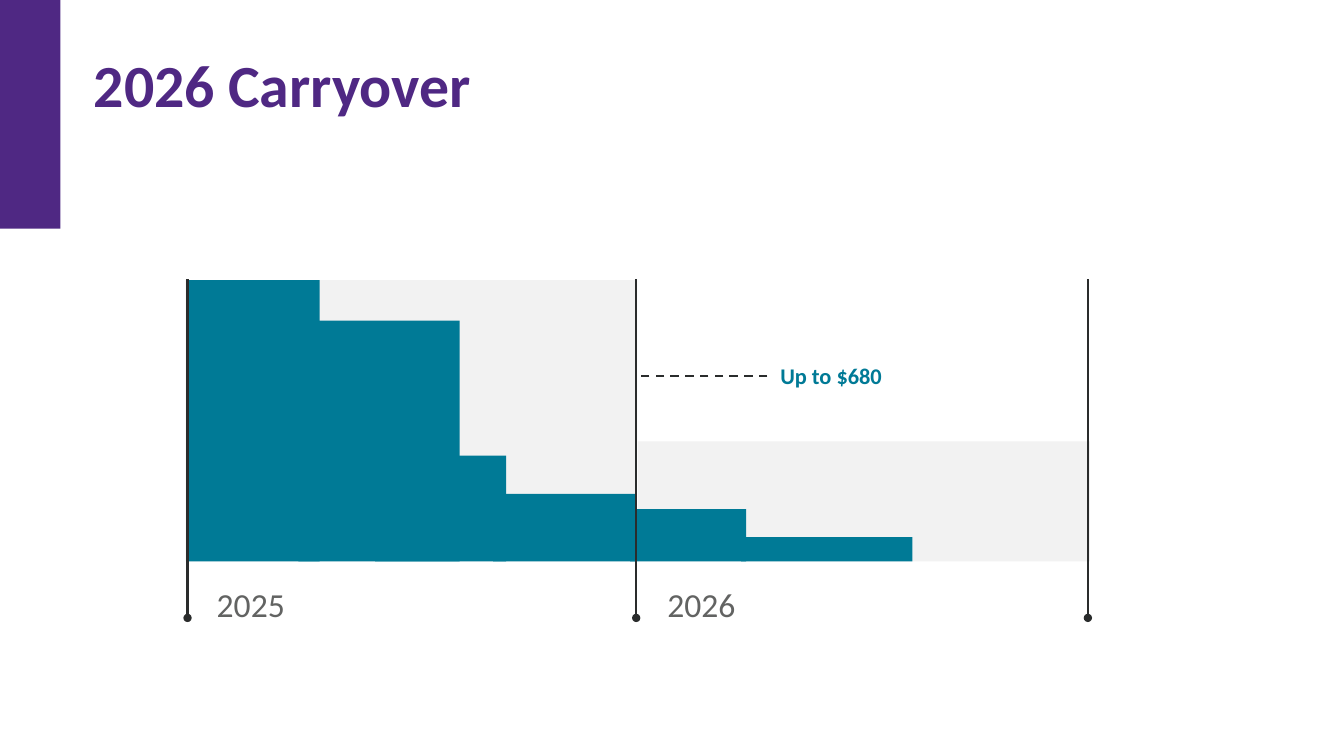
"""Build the 2026 Carryover slide."""
import pptx
import pptx.dml.color
import pptx.enum.dml
import pptx.enum.shapes
import pptx.enum.text
import pptx.oxml
import pptx.oxml.ns
import pptx.util
from pptx.util import Inches

COLORS = {"purple": "4F2883", "teal": "007A96", "panel": "F2F2F2",
          "line": "2A2C2C", "label": "626362"}
BASELINE = 5.57
AXIS_TOP, AXIS_END = 2.77, 6.13
AXES = [1.86, 10.79, 6.31]
PANELS = [(1.84, 4.48, 2.79), (6.33, 4.48, 1.19)]
BALANCES = [(1.87, 1.3, 2.79), (2.96, 1.6, 2.39), (3.72, 1.3, 1.05),
            (4.89, 1.41, 0.67), (6.25, 1.15, 0.52), (7.35, 1.7, 0.24)]
YEARS = [("2025", 2.02, 4.36), ("2026", 6.49, 4)]


class Painter:
    """Holds the style and the current page."""

    font = "Calibri"
    shapes = pptx.enum.shapes.MSO_SHAPE

    def __init__(self, page):
        self.page = page

    def color(self, name):
        return pptx.dml.color.RGBColor.from_string(COLORS[name])

    def fill_text(self, box, text, size, color, bold=False, inset=0.13):
        frame = box.text_frame
        frame.word_wrap = True
        frame.auto_size = pptx.enum.text.MSO_AUTO_SIZE.SHAPE_TO_FIT_TEXT
        frame.vertical_anchor = pptx.enum.text.MSO_ANCHOR.TOP
        frame.margin_left = frame.margin_right = Inches(inset)
        frame.margin_top = frame.margin_bottom = Inches(inset)
        para = frame.paragraphs[0]
        para.alignment = pptx.enum.text.PP_ALIGN.LEFT
        span = para.add_run()
        span.text = text
        span.font.name = self.font
        span.font.size = pptx.util.Pt(size)
        span.font.bold = bold
        span.font.color.rgb = self.color(color)
        return para

    def title(self, text):
        box = self.page.shapes.title
        box.left, box.top = Inches(0.93), Inches(0.4)
        box.width, box.height = Inches(11.85), Inches(0.74)
        para = self.fill_text(box, text, 42.7, "purple", bold=True, inset=0)
        para.line_spacing = 1.1

    def label(self, text, left, top, width, height, size, color, bold=False):
        box = self.page.shapes.add_textbox(
            Inches(left), Inches(top), Inches(width), Inches(height))
        self.fill_text(box, text, size, color, bold)

    def block(self, left, top, width, height, color, kind=shapes.RECTANGLE):
        box = self.page.shapes.add_shape(
            kind, Inches(left), Inches(top), Inches(width), Inches(height))
        box.shadow.inherit = False
        box.fill.solid()
        box.fill.fore_color.rgb = self.color(color)
        box.line.fill.background()
        return box

    def bar(self, left, width, height):
        self.block(left, BASELINE - height, width, height, "teal")

    def panel(self, left, width, height):
        box = self.block(left, BASELINE - height, width, height, "panel",
                         self.shapes.PENTAGON)
        box.adjustments[0] = 0

    def line(self, start, end, dashed=False, dot=False):
        link = self.page.shapes.add_connector(
            pptx.enum.shapes.MSO_CONNECTOR.STRAIGHT,
            *map(Inches, start), *map(Inches, end))
        link.line.width = pptx.util.Pt(1.5)
        link.line.color.rgb = self.color("line")
        if dashed:
            link.line.dash_style = pptx.enum.dml.MSO_LINE.DASH
        properties = link._element.spPr
        if dot:
            properties.ln.append(pptx.oxml.parse_xml(
                f'<a:tailEnd {pptx.oxml.ns.nsdecls("a")} type="oval"/>'))
        properties.append(pptx.oxml.parse_xml(
            f'<a:effectLst {pptx.oxml.ns.nsdecls("a")}/>'))


def main():
    deck = pptx.Presentation()
    deck.slide_width, deck.slide_height = Inches(13.33), Inches(7.5)
    page = deck.slides.add_slide(deck.slide_layouts[5])
    painter = Painter(page)
    painter.block(0, 0, 0.6, 2.27, "purple")
    painter.title("2026 Carryover")
    for panel in PANELS:
        painter.panel(*panel)
    for year, left, width in YEARS:
        painter.label(year, left, 5.66, width, 0.67, 24, "label")
    for balance in BALANCES:
        painter.bar(*balance)
    painter.line((7.61, 3.73), (6.31, 3.73), dashed=True)
    painter.label("Up to $680", 7.61, 3.46, 3.42, 0.54, 16, "teal", bold=True)
    for axis in AXES:
        painter.line((axis, AXIS_TOP), (axis, AXIS_END), dot=True)
    deck.save("out.pptx")


if __name__ == "__main__":
    main()
